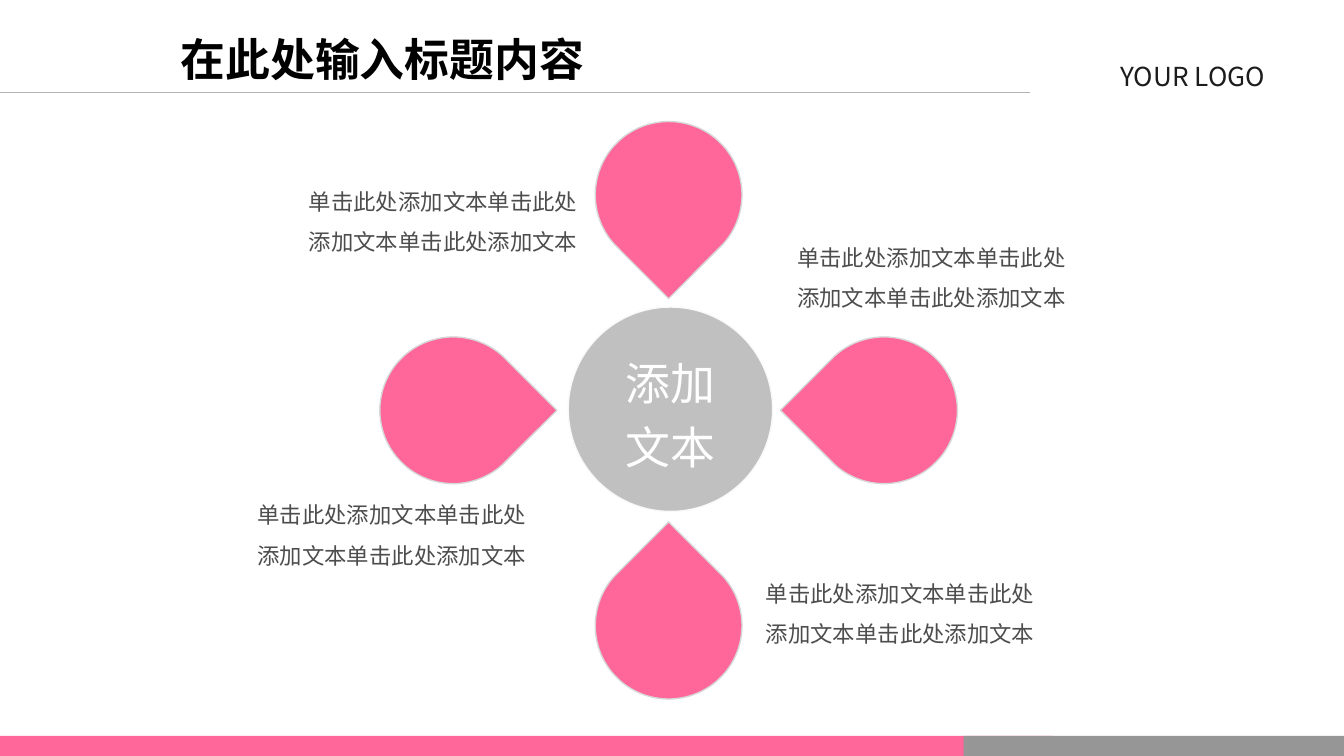
import math
import pptx
import pptx.util
import pptx.dml.color
import pptx.enum.shapes
import pptx.enum.text
from dataclasses import dataclass
from lxml import etree

Pt = pptx.util.Pt
Kind = pptx.enum.shapes.MSO_SHAPE
Align = pptx.enum.text.PP_ALIGN
Anchor = pptx.enum.text.MSO_ANCHOR
Fit = pptx.enum.text.MSO_AUTO_SIZE


@dataclass(frozen=True)
class Theme:
    pink: str = "FF6699"
    edge: str = "D7D7D7"
    hub: str = "C0C0C0"
    rim: str = "F9F9F9"
    rule: str = "B2B2B2"
    gray: str = "969696"
    ink: str = "000000"
    dark: str = "1C1C1C"
    body: str = "4D4D4D"
    white: str = "FFFFFF"
    big: int = 24
    mid: int = 14
    small: int = 12
    thin: float = 0.75


THEME = Theme()


def paint(hue):
    return pptx.dml.color.RGBColor.from_string(hue)


def write(shape, text, *, size, font, color, bold=False,
          align=Align.LEFT, space=1.0, anchor=Anchor.TOP, fit=Fit.NONE):
    frame = shape.text_frame
    frame.word_wrap = True
    frame.auto_size = fit
    frame.vertical_anchor = anchor
    frame.text = text
    para = frame.paragraphs[0]
    para.alignment = align
    para.line_spacing = space
    face = para.runs[0].font
    face.size, face.name, face.bold = Pt(size), font, bold
    face.color.rgb = paint(color)


def place(shape, box):
    shape.left, shape.top, shape.width, shape.height = map(Pt, box)


def label(slide, box, text, **form):
    shape = slide.shapes.add_textbox(*map(Pt, box))
    write(shape, text, fit=Fit.SHAPE_TO_FIT_TEXT, **form)


def style(shape, fill, line=None):
    shape.shadow.inherit = False
    shape.fill.solid()
    shape.fill.fore_color.rgb = paint(fill)
    if line:
        shape.line.color.rgb = paint(line)
        shape.line.width = Pt(THEME.thin)
    else:
        shape.line.fill.background()


def solid(slide, kind, box, fill, line=None):
    shape = slide.shapes.add_shape(kind, *map(Pt, box))
    style(shape, fill, line)
    return shape


def rule(slide, x1, y1, x2, y2):
    line = slide.shapes.add_connector(
        pptx.enum.shapes.MSO_CONNECTOR.STRAIGHT, Pt(x1), Pt(y1), Pt(x2), Pt(y2))
    line.line.color.rgb = paint(THEME.rule)
    line.line.width = Pt(THEME.thin)
    etree.SubElement(line._element.spPr, pptx.oxml.ns.qn("a:effectLst"))


def petal(slide, midx, midy, radius, aim):
    # The tip lies where the tangents at 45 degrees either side of aim meet
    def spot(turn, reach):
        angle = math.radians(aim + turn)
        return (Pt(midx + reach * math.cos(angle)),
                Pt(midy + reach * math.sin(angle)))

    tip = spot(0, radius * math.sqrt(2))
    arc = [spot(turn, radius) for turn in range(45, 316, 3)]
    pen = slide.shapes.build_freeform(*tip)
    pen.add_line_segments(arc, close=True)
    style(pen.convert_to_shape(), THEME.pink, THEME.edge)


def petals(slide):
    # Four drops around one centre, each with its tip turned inward
    midx, midy, reach = 358.2, 219.8, 115.4
    for side in (270, 0, 90, 180):
        angle = math.radians(side)
        petal(slide, midx + reach * math.cos(angle),
              midy + reach * math.sin(angle), 39.3, side + 180)


def main():
    deck = pptx.Presentation()
    deck.slide_width, deck.slide_height = Pt(720), Pt(405)
    slide = deck.slides.add_slide(deck.slide_layouts[5])

    # Header
    rule(slide, 0, 49.5, 552, 49.5)
    label(slide, (564, 28.8, 150, 24), "YOUR LOGO", size=THEME.mid,
          font="Noto Sans CJK SC", color=THEME.dark, align=Align.CENTER)
    title = slide.shapes.title
    place(title, (66, 13.5, 277.6, 36))
    write(title, "在此处输入标题内容", size=THEME.big, font="Times New Roman",
          color=THEME.ink, bold=True, align=Align.CENTER,
          fit=Fit.SHAPE_TO_FIT_TEXT)

    # Footer bars
    solid(slide, Kind.RECTANGLE, (0, 394.3, 564, 10.7), THEME.pink)
    solid(slide, Kind.RECTANGLE, (516.3, 394.3, 203.7, 10.7), THEME.gray)

    # Notes beside the petals
    note = "单击此处添加文本" * 3
    for left, top, align in ((149.5, 90, Align.RIGHT), (122, 258, Align.RIGHT),
                             (403.2, 300, Align.LEFT), (420, 120, Align.LEFT)):
        label(slide, (left, top, 167, 50.5), note, size=THEME.small,
              font="Calibri", color=THEME.body, align=align, space=1.5)

    # Hub and petals
    hub = solid(slide, Kind.OVAL, (304.4, 164.5, 109.5, 109.5),
                THEME.hub, THEME.rim)
    write(hub, "添加文本", size=THEME.big, font="Arial", color=THEME.white,
          align=Align.CENTER, space=1.2, anchor=Anchor.MIDDLE)
    petals(slide)

    deck.save("out.pptx")


if __name__ == "__main__":
    main()
